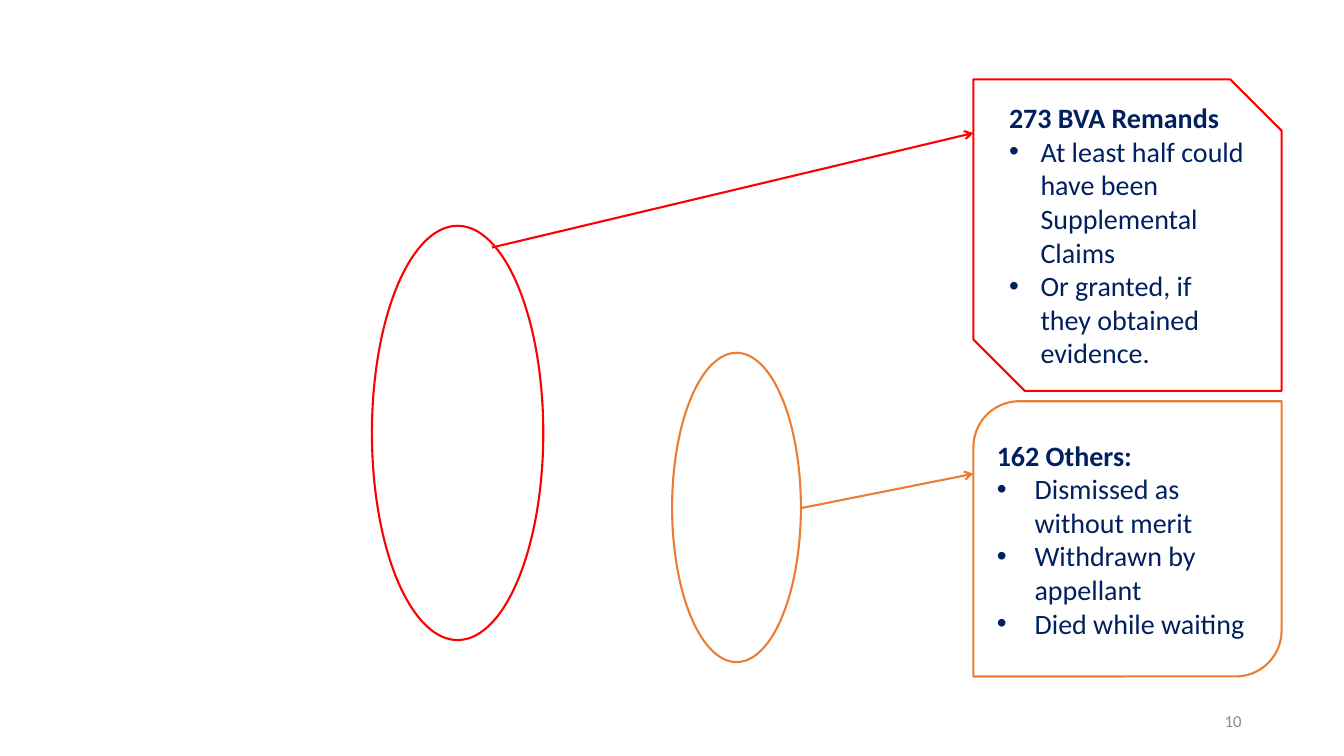
from dataclasses import dataclass

from lxml.etree import SubElement
from pptx import Presentation
from pptx.dml.color import RGBColor as Rgb
from pptx.enum.shapes import MSO_CONNECTOR as Connector, MSO_SHAPE as Preset
from pptx.enum.text import MSO_ANCHOR as Anchor, PP_ALIGN as Align
from pptx.oxml.ns import qn
from pptx.util import Pt

COLORS = {"red": "FF0000", "orange": "ED7D31", "navy": "002060", "gray": "8C8C8C"}
FONT = "Calibri"
LINE_WIDTH = 1.5


@dataclass(frozen=True)
class Outline:
    preset: Preset
    left: float
    top: float
    width: float
    height: float
    color: str


@dataclass(frozen=True)
class Callout:
    outline: Outline
    heading: str
    bullets: tuple[str, ...]
    indent: float


@dataclass(frozen=True)
class Arrow:
    start: tuple[float, float]
    end: tuple[float, float]
    color: str


RINGS = (
    Outline(Preset.OVAL, 265.7, 161.3, 122.4, 295.9, "red"),
    Outline(Preset.OVAL, 480.1, 252, 92, 221, "orange"),
)
CALLOUTS = (
    Callout(
        Outline(Preset.SNIP_2_DIAG_RECTANGLE, 695.3, 56.7, 220.1, 222.5, "red"),
        "273 BVA Remands",
        (
            "At least half could have been Supplemental Claims",
            "Or granted, if they obtained evidence.",
        ),
        22.5,
    ),
    Callout(
        Outline(Preset.ROUND_2_DIAG_RECTANGLE, 695.3, 286.6, 220.1, 196.6, "orange"),
        "162 Others:",
        ("Dismissed as without merit", "Withdrawn by appellant", "Died while waiting"),
        27,
    ),
)
ARROWS = (
    Arrow((351.4, 176.8), (695.3, 95), "red"),
    Arrow((572, 363), (695.3, 338.4), "orange"),
)


def rgb(name: str) -> Rgb:
    return Rgb.from_string(COLORS[name])


def add_outline(page, outline: Outline):
    shape = page.shapes.add_shape(
        outline.preset,
        Pt(outline.left),
        Pt(outline.top),
        Pt(outline.width),
        Pt(outline.height),
    )
    shape.shadow.inherit = False
    shape.fill.background()
    shape.line.color.rgb = rgb(outline.color)
    shape.line.width = Pt(LINE_WIDTH)
    return shape


def write(para, text: str, *, size: float = 20, color: str = "navy",
          bold: bool = False, align: Align = Align.LEFT, indent: float = 0) -> None:
    para.alignment = align
    if indent:
        properties = para._p.get_or_add_pPr()
        properties.set("marL", str(Pt(indent)))
        properties.set("indent", str(-Pt(indent)))
        SubElement(properties, qn("a:buFont"), typeface="Arial")
        SubElement(properties, qn("a:buChar"), char="•")
    span = para.add_run()
    span.text = text
    span.font.name = FONT
    span.font.size = Pt(size)
    span.font.bold = bold
    span.font.color.rgb = rgb(color)


def add_callout(page, callout: Callout) -> None:
    frame = add_outline(page, callout.outline).text_frame
    frame.word_wrap = True
    frame.vertical_anchor = Anchor.MIDDLE
    write(frame.paragraphs[0], callout.heading, bold=True)
    for bullet in callout.bullets:
        write(frame.add_paragraph(), bullet, indent=callout.indent)


def add_arrow(page, arrow: Arrow) -> None:
    connector = page.shapes.add_connector(
        Connector.STRAIGHT, *(Pt(value) for value in arrow.start + arrow.end)
    )
    connector.line.color.rgb = rgb(arrow.color)
    connector.line.width = Pt(LINE_WIDTH)
    SubElement(connector.line._get_or_add_ln(), qn("a:tailEnd"), type="arrow")
    SubElement(connector._element.spPr, qn("a:effectLst"))


def add_page_number(page, number: str) -> None:
    box = page.shapes.add_textbox(Pt(678), Pt(500.5), Pt(216), Pt(28.8))
    frame = box.text_frame
    frame.word_wrap = True
    frame.vertical_anchor = Anchor.MIDDLE
    write(frame.paragraphs[0], number, size=12, color="gray", align=Align.RIGHT)


def main() -> None:
    deck = Presentation()
    deck.slide_width, deck.slide_height = Pt(960), Pt(540)
    page = deck.slides.add_slide(deck.slide_layouts[6])
    add_page_number(page, "10")
    for ring in RINGS:
        add_outline(page, ring)
    for callout in CALLOUTS:
        add_callout(page, callout)
    for arrow in ARROWS:
        add_arrow(page, arrow)
    deck.save("out.pptx")


if __name__ == "__main__":
    main()
